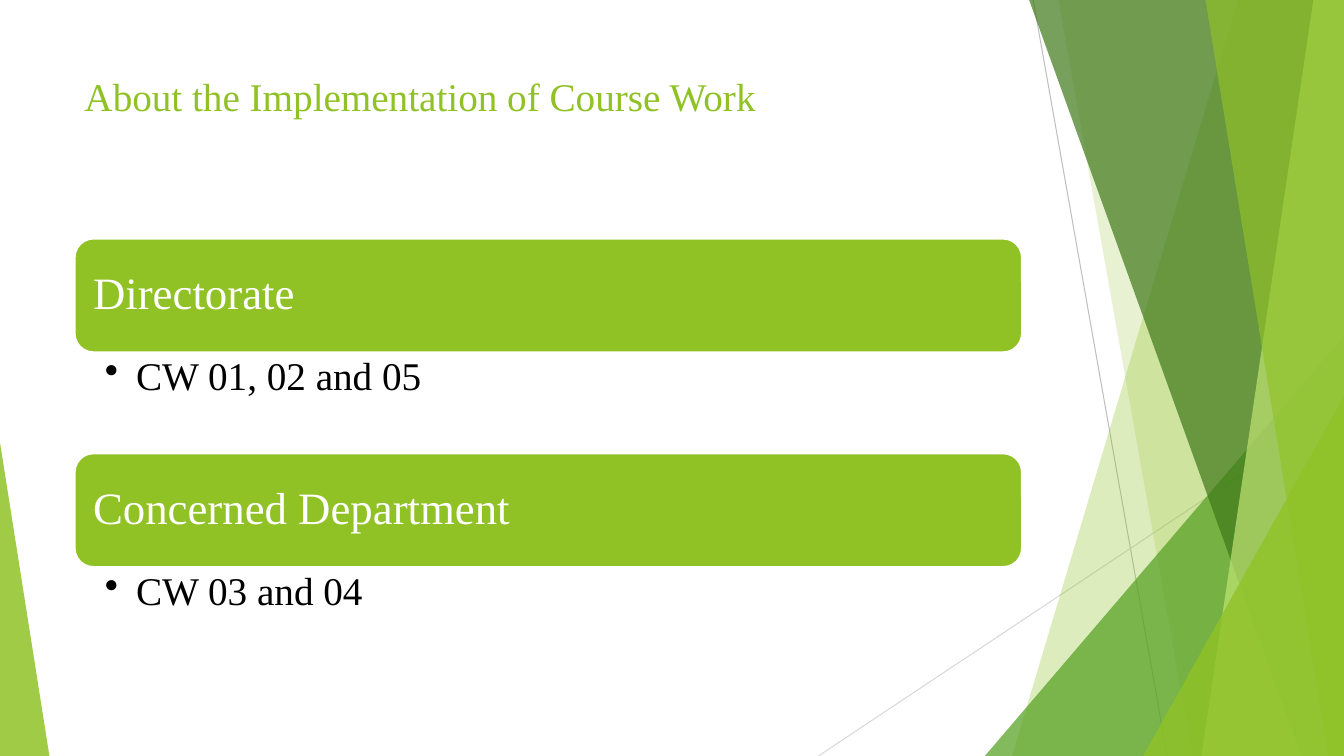
from lxml import etree
from pptx import Presentation
from pptx.dml.color import RGBColor
from pptx.enum.shapes import MSO_CONNECTOR, MSO_SHAPE
from pptx.enum.text import MSO_ANCHOR
from pptx.oxml.ns import qn
from pptx.util import Inches, Pt

LINE = MSO_CONNECTOR.STRAIGHT
ROUND = MSO_SHAPE.ROUNDED_RECTANGLE
WEDGE = MSO_SHAPE.ISOSCELES_TRIANGLE
TOP, MID = MSO_ANCHOR.TOP, MSO_ANCHOR.MIDDLE

COLS, ROWS = 40, 22.5
CELL = Inches(1) / 3
HUES = {
    "lime": "90C226", "leaf": "54A021", "pine": "3F7819", "pale": "C0E474",
    "gray": "BFBFBF", "mist": "D9D9D9", "white": "FFFFFF", "black": "000000",
}


def grid(*cells):
    return [round(cell * CELL) for cell in cells]


class Deck:
    def __init__(self):
        self.file = Presentation()
        self.file.slide_width, self.file.slide_height = grid(COLS, ROWS)
        self.slide = self.file.slides.add_slide(self.file.slide_layouts[6])
        self.shapes = self.slide.shapes
        self.font = "Times New Roman"

    def hue(self, name):
        return RGBColor.from_string(HUES[name])

    def paint(self, shape, name, share=100):
        shape.shadow.inherit = False
        shape.fill.solid()
        shape.fill.fore_color.rgb = self.hue(name)
        shape.line.fill.background()
        if share < 100:
            tint = shape._element.spPr.find(qn("a:solidFill"))[0]
            etree.SubElement(tint, qn("a:alpha"), val=str(share * 1000))

    def line(self, start, end, name):
        line = self.shapes.add_connector(LINE, *grid(*start, *end))
        line.line.color.rgb = self.hue(name)
        line.line.width = Pt(0.75)
        etree.SubElement(line._element.spPr, qn("a:effectLst"))

    def shard(self, top, foot, name, share):
        pen = self.shapes.build_freeform(*grid(top, 0))
        edge = [(COLS, 0), (COLS, ROWS), (foot, ROWS)]
        pen.add_line_segments([grid(*spot) for spot in edge], close=True)
        self.paint(pen.convert_to_shape(), name, share)

    def wedge(self, left, top, width, tip, name, share):
        shape = self.shapes.add_shape(WEDGE, *grid(left, top, width, ROWS - top))
        shape.adjustments[0] = tip
        self.paint(shape, name, share)

    def bar(self, box):
        shape = self.shapes.add_shape(ROUND, *grid(*box))
        self.paint(shape, "lime")
        shape.line.color.rgb = self.hue("white")
        shape.line.width = Pt(1.5)

    def text(self, box, words, size, name, pads=(0.3, 0.15, 0.3, 0.15),
             anchor=TOP, space=1, dot=False):
        frame = self.shapes.add_textbox(*grid(*box)).text_frame
        frame.word_wrap = True
        frame.vertical_anchor = anchor
        (frame.margin_left, frame.margin_top,
         frame.margin_right, frame.margin_bottom) = grid(*pads)
        para = frame.paragraphs[0]
        para.line_spacing = space
        if dot:
            props = para._p.get_or_add_pPr()
            dent = grid(0.93)[0]
            props.set("marL", str(dent))
            props.set("indent", str(-dent))
            etree.SubElement(props, qn("a:buChar"), char="•")
        run = para.add_run()
        run.text = words
        run.font.name = self.font
        run.font.size = Pt(size)
        run.font.color.rgb = self.hue(name)


def main():
    deck = Deck()
    deck.line((30.75, 0), (34.74, ROWS), "gray")
    deck.line((COLS, 12.09), (24.36, ROWS), "mist")
    deck.shard(36.84, 30.12, "lime", 30)
    deck.shard(31.5, 35.49, "lime", 20)
    deck.wedge(29.31, 10, 10.69, 1, "leaf", 72)
    deck.shard(30.63, 38.73, "pine", 70)
    deck.shard(39.09, 35.76, "pale", 70)
    deck.shard(35.88, 39.54, "lime", 65)
    deck.wedge(34.02, 11.8, 5.98, 1, "lime", 80)
    deck.wedge(0, 13.17, 1.47, 0, "lime", 85)

    left, width, high, low = 2.22, 28.2, 3.39, 3
    deck.text((left, 2, width, 4.33),
              "About the Implementation of Course Work", 28, "lime")
    parts = [("Directorate", "CW 01, 02 and 05"),
             ("Concerned Department", "CW 03 and 04")]
    inset = 0.17
    for step, (head, item) in enumerate(parts):
        top = 7.1 + step * (high + low)
        deck.bar((left, top, width, high))
        deck.text((left + inset, top + inset, width - 2 * inset, high - 2 * inset),
                  head, 32, "white", (0.38,) * 4, MID, 0.9)
        deck.text((left, top + high, width, low), item, 28, "black",
                  (0.9, 0.12, 0.66, 0.12), TOP, 0.9, True)
    deck.file.save("out.pptx")


if __name__ == "__main__":
    main()
